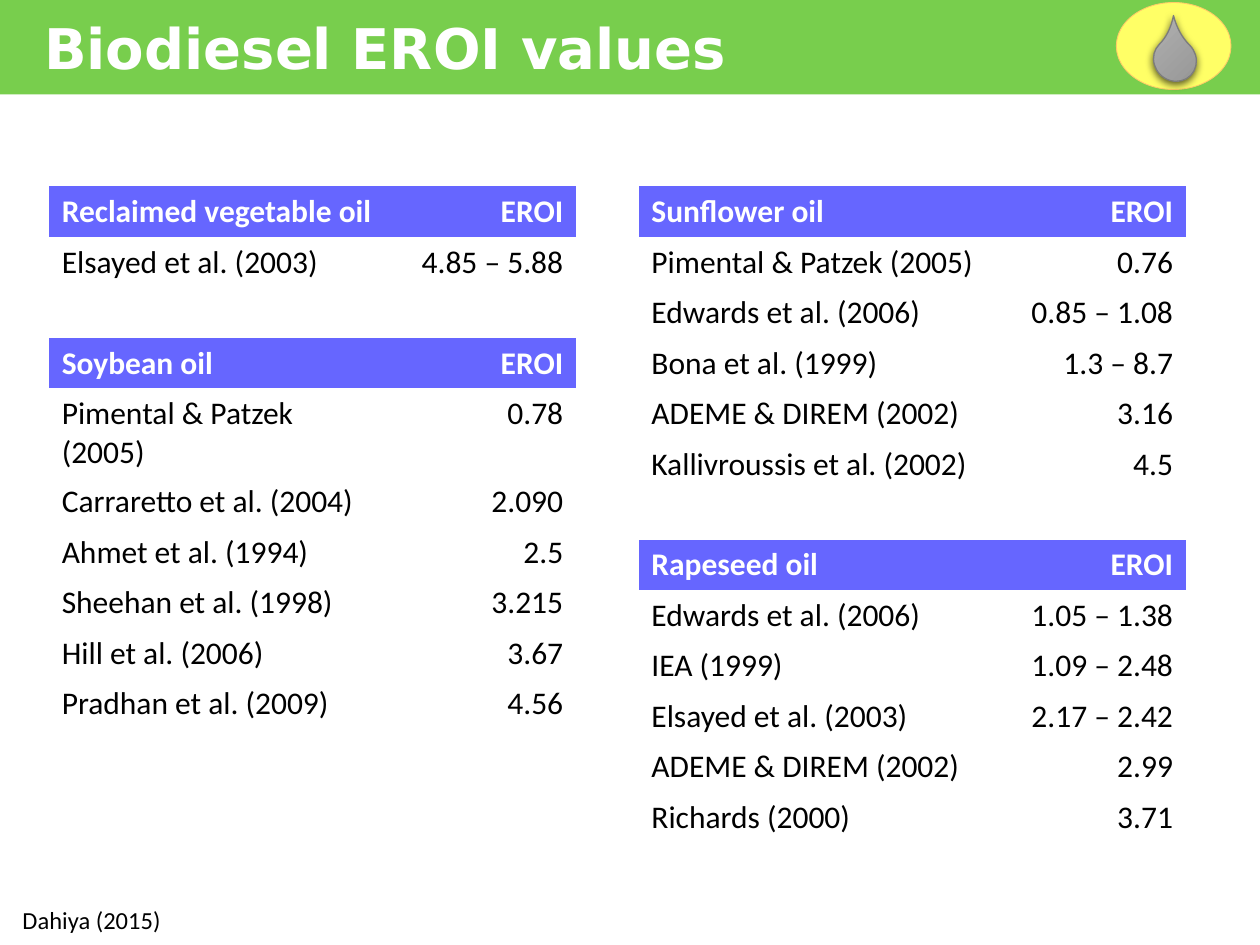
from lxml.etree import SubElement
from pptx import Presentation
from pptx.dml.color import RGBColor
from pptx.enum.shapes import MSO_SHAPE as SHAPE
from pptx.enum.text import MSO_ANCHOR as ANCHOR, PP_ALIGN as ALIGN
from pptx.oxml.ns import qn
from pptx.util import Inches, Pt

COLORS = {
    "bar": "78CE4D", "header": "6666FF", "white": "FFFFFF", "black": "000000",
    "badge": "FFFF66", "badge_line": "FFCC66",
    "drop_top": "AFAFAF", "drop_bottom": "939393", "drop_line": "7C7C7C",
}
COLUMNS, ROWS = 100, 75
NO_STYLE = "{2D5ABB26-0587-4C30-8999-92F81FD0307C}"

LEFT_OILS = {
    "Reclaimed vegetable oil": [("Elsayed et al. (2003)", "4.85 – 5.88")],
    "Soybean oil": [
        ("Pimental & Patzek (2005)", "0.78"),
        ("Carraretto et al. (2004)", "2.090"),
        ("Ahmet et al. (1994)", "2.5"),
        ("Sheehan et al. (1998)", "3.215"),
        ("Hill et al. (2006)", "3.67"),
        ("Pradhan et al. (2009)", "4.56"),
    ],
}
RIGHT_OILS = {
    "Sunflower oil": [
        ("Pimental & Patzek (2005)", "0.76"),
        ("Edwards et al. (2006)", "0.85 – 1.08"),
        ("Bona et al. (1999)", "1.3 – 8.7"),
        ("ADEME & DIREM (2002)", "3.16"),
        ("Kallivroussis et al. (2002)", "4.5"),
    ],
    "Rapeseed oil": [
        ("Edwards et al. (2006)", "1.05 – 1.38"),
        ("IEA (1999)", "1.09 – 2.48"),
        ("Elsayed et al. (2003)", "2.17 – 2.42"),
        ("ADEME & DIREM (2002)", "2.99"),
        ("Richards (2000)", "3.71"),
    ],
}


def rgb(name):
    return RGBColor.from_string(COLORS[name])


class Deck:
    """Hold the presentation, its style and the current slide, measured on a grid."""

    def __init__(self):
        self.prs = Presentation()
        self.prs.slide_width, self.prs.slide_height = Inches(10), Inches(7.5)
        self.s = self.prs.slides.add_slide(self.prs.slide_layouts[5])

    def across(self, columns):
        return round(self.prs.slide_width * columns / COLUMNS)

    def down(self, rows):
        return round(self.prs.slide_height * rows / ROWS)

    def box(self, x, y, w, h):
        return self.across(x), self.down(y), self.across(w), self.down(h)

    def style(self, p, size, color="black", bold=False, font="Calibri", align=ALIGN.LEFT):
        p.alignment = align
        p.font.name, p.font.size, p.font.bold = font, Pt(size), bold
        p.font.color.rgb = rgb(color)

    def title(self, text, *place):
        sp = self.s.shapes.title
        sp.left, sp.top, sp.width, sp.height = self.box(*place)
        tf = sp.text_frame
        tf.text, tf.word_wrap, tf.vertical_anchor = text, False, ANCHOR.MIDDLE
        self.style(tf.paragraphs[0], 32, "white", True, "DejaVu Sans")

    def text(self, text, *place):
        tf = self.s.shapes.add_textbox(*self.box(*place)).text_frame
        tf.text, tf.word_wrap = text, False
        self.style(tf.paragraphs[0], 14)

    def shape(self, kind, place, fill, line=None, weight=0.5, parent=None):
        sp = (parent or self.s).shapes.add_shape(kind, *self.box(*place))
        sp.shadow.inherit = False
        sp.fill.solid()
        sp.fill.fore_color.rgb = rgb(fill)
        if line:
            sp.line.color.rgb, sp.line.width = rgb(line), Pt(weight)
        else:
            sp.line.fill.background()
        return sp

    def bar(self, *place):
        sp = self.shape(SHAPE.RECTANGLE, place, "bar")
        sp.element.getparent().insert(2, sp.element)

    def drop_badge(self, badge, drop):
        group = self.s.shapes.add_group_shape()
        self.shape(SHAPE.OVAL, badge, "badge", "badge_line", parent=group)
        sp = self.shape(SHAPE.TEAR, drop, "drop_top", "drop_line", 0.75, group)
        sp.rotation, sp.adjustments[0] = 314.8, 1.465
        sp.fill.gradient()
        sp.fill.gradient_angle = 270
        for stop, name in zip(sp.fill.gradient_stops, ("drop_top", "drop_bottom")):
            stop.color.rgb = rgb(name)
        effects = sp.element.spPr.find(qn("a:effectLst"))
        shadow = SubElement(effects, qn("a:outerShdw"), blurRad=str(Pt(4.5)),
                            dist=str(Pt(1.5)), dir="5400000", rotWithShape="0")
        color = SubElement(shadow, qn("a:srgbClr"), val=COLORS["black"])
        SubElement(color, qn("a:alpha"), val="63000")

    def table(self, oils, x, y, widths, row=4):
        lines = []
        for oil, studies in oils.items():
            lines += [("", "")] if lines else []
            lines += [(oil, "EROI"), *studies]
        frame = self.s.shapes.add_table(
            len(lines), len(widths), *self.box(x, y, sum(widths), row * len(lines)))
        table = frame.table
        table.first_row = table.horz_banding = False
        next(frame.element.iter(qn("a:tableStyleId"))).text = NO_STYLE
        for column, width in zip(table.columns, widths):
            column.width = self.across(width)
        for i, line in enumerate(lines):
            header = line[0] in oils
            for j, text in enumerate(line):
                cell = table.cell(i, j)
                cell.text = text
                if header:
                    cell.fill.solid()
                    cell.fill.fore_color.rgb = rgb("header")
                else:
                    cell.fill.background()
                self.style(cell.text_frame.paragraphs[0], 18,
                           "white" if header else "black", header,
                           align=ALIGN.RIGHT if j else ALIGN.LEFT)


def main():
    deck = Deck()
    deck.bar(0, 0, COLUMNS, 7.5)
    deck.title("Biodiesel EROI values", 2.5, 0.5, 57.1, 6.4)
    deck.drop_badge((88.6, 0.2, 9.1, 6.9), (91.6, 3, 3.3, 3.5))
    deck.text("Dahiya (2015)", 0.8, 71.3, 13.1, 3.4)
    deck.table(LEFT_OILS, 3.9, 14.8, (27.2, 14.6))
    deck.table(RIGHT_OILS, 50.7, 14.8, (28.4, 15))
    deck.prs.save("out.pptx")


if __name__ == "__main__":
    main()
